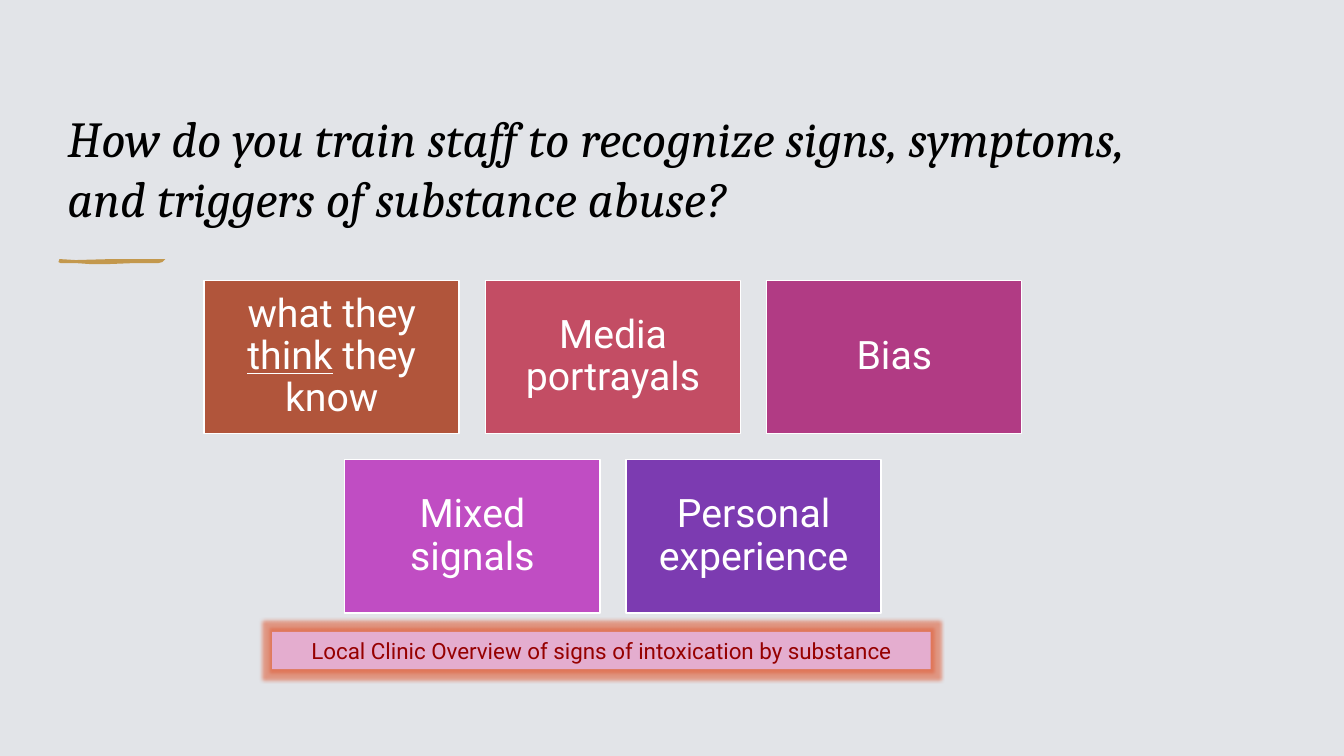
from lxml.etree import SubElement
from pptx import Presentation
from pptx.dml.color import RGBColor
from pptx.enum.shapes import MSO_SHAPE
from pptx.enum.text import MSO_ANCHOR, PP_ALIGN
from pptx.oxml.ns import qn
from pptx.util import Inches, Pt

COLORS = {
    "background": "E2E4E8", "title": "000000", "stroke": "C3984D", "white": "FFFFFF",
    "rust": "B1553B", "rose": "C34D64", "berry": "B13B84", "orchid": "C04DC3",
    "violet": "7C3BB1", "banner": "E4ADCF", "banner text": "960000", "glow": "E0633F",
}


def color(name):
    return RGBColor.from_string(COLORS[name])


def write(shape, text, size, font, ink, underlined="", italic=None, inset=None,
          align=PP_ALIGN.LEFT, anchor=MSO_ANCHOR.MIDDLE, spacing=None):
    frame = shape.text_frame
    frame.word_wrap = True
    frame.vertical_anchor = anchor
    if inset is not None:
        frame.margin_left = frame.margin_right = Inches(inset)
        frame.margin_top = frame.margin_bottom = Inches(inset)
    paragraph = frame.paragraphs[0]
    paragraph.alignment = align
    paragraph.line_spacing = spacing
    before, word, after = text.partition(underlined) if underlined else (text, "", "")
    for part in filter(None, (before, word, after)):
        run = paragraph.add_run()
        run.text = part
        run.font.size = Pt(size)
        run.font.name = font
        run.font.italic = italic
        run.font.underline = True if part == underlined else None
        run.font.color.rgb = color(ink)


deck = Presentation()
deck.slide_width, deck.slide_height = Inches(13.33), Inches(7.5)
slide = deck.slides.add_slide(deck.slide_layouts[6])
slide.background.fill.solid()
slide.background.fill.fore_color.rgb = color("background")

# Title
title = slide.shapes.add_textbox(Inches(0.57), Inches(0.86), Inches(11.02), Inches(1.45))
write(title, "How do you train staff to recognize signs, symptoms, and triggers of substance abuse?",
      36, "Cambria", "title", italic=True, anchor=MSO_ANCHOR.BOTTOM)

# Brush stroke under the title
outline = [(0.59, 2.57), (0.75, 2.58), (1.11, 2.57), (1.64, 2.57), (1.61, 2.6), (1.57, 2.61),
           (1.33, 2.61), (1.07, 2.62), (0.9, 2.62), (0.75, 2.61), (0.6, 2.61), (0.58, 2.6)]
points = [(Inches(x), Inches(y)) for x, y in outline]
builder = slide.shapes.build_freeform(*points[0])
builder.add_line_segments(points[1:], close=True)
stroke = builder.convert_to_shape()
stroke.shadow.inherit = False
stroke.fill.solid()
stroke.fill.fore_color.rgb = color("stroke")
stroke.line.fill.background()

# Topic tiles: each row is centred on the same axis
TILE_WIDTH, TILE_HEIGHT, GAP, CENTER, TOP = 2.53, 1.52, 0.26, 6.08, 2.78
topic_rows = [
    [("what they think they know", "rust"), ("Media portrayals", "rose"), ("Bias", "berry")],
    [("Mixed signals", "orchid"), ("Personal experience", "violet")],
]
for row, topics in enumerate(topic_rows):
    row_width = len(topics) * (TILE_WIDTH + GAP) - GAP
    for column, (topic, fill) in enumerate(topics):
        left = CENTER - row_width / 2 + column * (TILE_WIDTH + GAP)
        top = TOP + row * (TILE_HEIGHT + GAP)
        tile = slide.shapes.add_shape(MSO_SHAPE.RECTANGLE, Inches(left), Inches(top),
                                      Inches(TILE_WIDTH), Inches(TILE_HEIGHT))
        tile.shadow.inherit = False
        tile.fill.solid()
        tile.fill.fore_color.rgb = color(fill)
        tile.line.color.rgb = color("white")
        tile.line.width = Pt(1)
        write(tile, topic, 28, "Roboto", "white", underlined="think", inset=0.12,
              align=PP_ALIGN.CENTER, spacing=0.9)

# Glowing banner
banner = slide.shapes.add_shape(MSO_SHAPE.RECTANGLE, Inches(2.7), Inches(6.27),
                                Inches(6.53), Inches(0.37))
banner.shadow.inherit = False
banner.fill.solid()
banner.fill.fore_color.rgb = color("banner")
banner.line.fill.background()
effects = banner.element.spPr.find(qn("a:effectLst"))
glow = SubElement(effects, qn("a:glow"), rad=str(Pt(5)))
glow_color = SubElement(glow, qn("a:srgbClr"), val=COLORS["glow"])
SubElement(glow_color, qn("a:alpha"), val="60000")
write(banner, "Local Clinic Overview of signs of intoxication by substance",
      16, "Roboto", "banner text", align=PP_ALIGN.CENTER)

deck.save("out.pptx")
